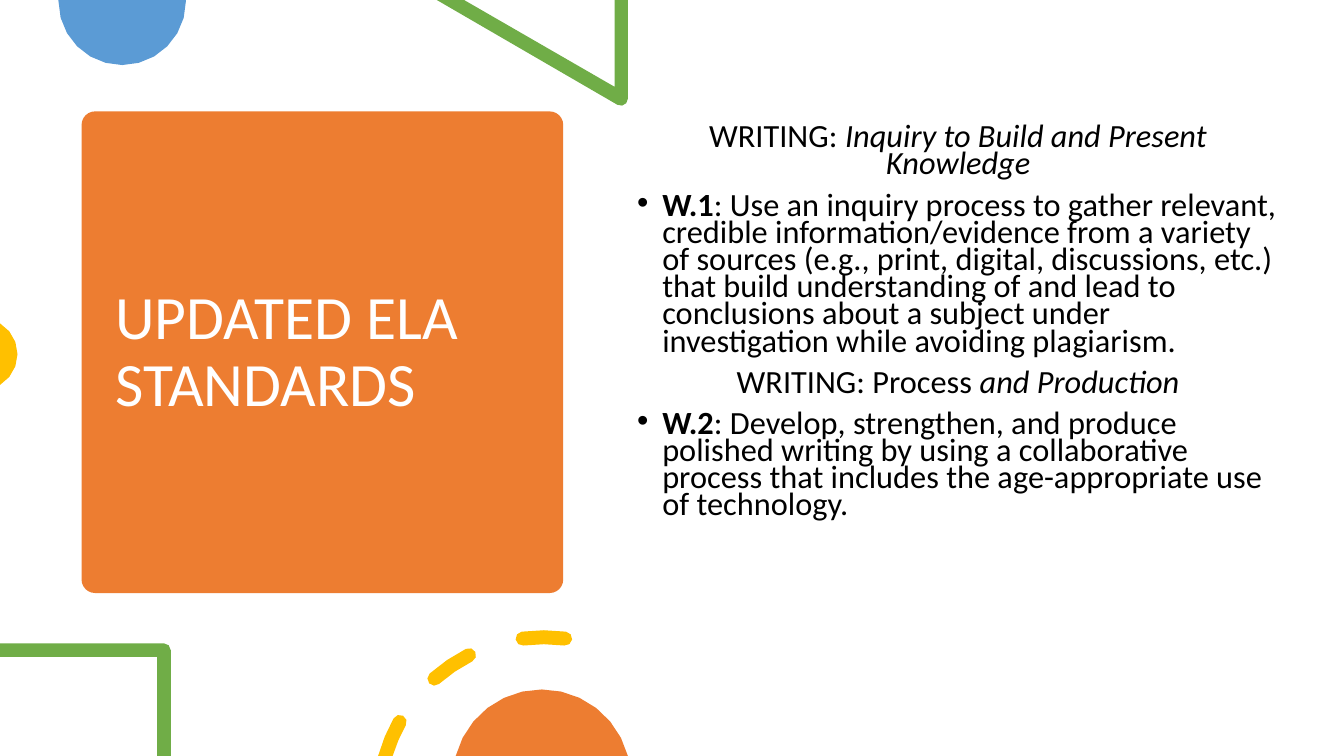
from dataclasses import dataclass
from math import acos, cos, degrees, radians, sin

from lxml import etree
from pptx import Presentation
from pptx.dml.color import RGBColor
from pptx.enum.shapes import MSO_SHAPE
from pptx.enum.text import MSO_ANCHOR, PP_ALIGN
from pptx.oxml.ns import qn
from pptx.util import Pt

ROUNDED = MSO_SHAPE.ROUNDED_RECTANGLE
MIDDLE, TOP = MSO_ANCHOR.MIDDLE, MSO_ANCHOR.TOP
CENTER, LEFT = PP_ALIGN.CENTER, PP_ALIGN.LEFT


@dataclass(frozen=True)
class Theme:
    font: str = "Calibri"
    title_size: float = 44
    body_size: float = 23.1
    orange: RGBColor = RGBColor(0xED, 0x7D, 0x31)
    blue: RGBColor = RGBColor(0x5B, 0x9B, 0xD5)
    green: RGBColor = RGBColor(0x70, 0xAD, 0x47)
    yellow: RGBColor = RGBColor(0xFF, 0xC0, 0x00)
    white: RGBColor = RGBColor(0xFF, 0xFF, 0xFF)
    black: RGBColor = RGBColor(0, 0, 0)


T = Theme()
WIDTH, HEIGHT = 960, 540

# Each paragraph: is it a bullet, then its (text, bold, italic) runs
STANDARDS = [
    (False, [("WRITING: ", False, False),
             ("Inquiry to Build and Present Knowledge", False, True)]),
    (True, [("W.1", True, False),
            (": Use an inquiry process to gather relevant, credible "
             "information/evidence from a variety of sources (e.g., print, "
             "digital, discussions, etc.) that build understanding of and lead "
             "to conclusions about a subject under investigation while "
             "avoiding plagiarism.", False, False)]),
    (False, [("WRITING: Process", False, False),
             (" and Production", False, True)]),
    (True, [("W.2", True, False),
            (": Develop, strengthen, and produce polished writing by using a "
             "collaborative process that includes the age-appropriate use of "
             "technology.", False, False)]),
]


def paint(sp, color):
    sp.shadow.inherit = False
    sp.fill.solid()
    sp.fill.fore_color.rgb = color
    sp.line.fill.background()


def arc(cx, cy, radius, start, end, steps):
    """Points on an arc; degrees run clockwise from three o'clock."""
    angles = [radians(start + (end - start) * i / steps) for i in range(steps + 1)]
    return [(cx + radius * cos(a), cy + radius * sin(a)) for a in angles]


def outline(s, contours, color):
    """One filled shape made of one or more closed contours."""
    builder = None
    for points in contours:
        first, *rest = [(Pt(x), Pt(y)) for x, y in points]
        if builder is None:
            builder = s.shapes.build_freeform(*first, scale=1.0)
        else:
            builder.move_to(*first)
        builder.add_line_segments(rest, close=True)
    paint(builder.convert_to_shape(), color)


def text_frame(s, box, anchor):
    tf = s.shapes.add_textbox(*map(Pt, box)).text_frame
    tf.word_wrap = True
    tf.vertical_anchor = anchor
    return tf


def style_run(r, size, color):
    r.font.name = T.font
    r.font.size = Pt(size)
    r.font.color.rgb = color


def title_card(s, box):
    x, y, w, h = box
    sp = s.shapes.add_shape(ROUNDED, *map(Pt, box))
    sp.adjustments[0] = 0.028
    paint(sp, T.orange)
    tf = text_frame(s, (x + 17, y + 8.4, w - 34, h - 16), MIDDLE)
    tf.text = "UPDATED ELA STANDARDS"
    p = tf.paragraphs[0]
    p.line_spacing = 0.9
    style_run(p.runs[0], T.title_size, T.white)


def add_bullet(p):
    pPr = p._p.get_or_add_pPr()
    pPr.set("marL", str(Pt(18)))
    pPr.set("indent", str(Pt(-18)))
    etree.SubElement(pPr, qn("a:buFont")).set("typeface", "Arial")
    etree.SubElement(pPr, qn("a:buChar")).set("char", "•")


def standards_list(s, box):
    tf = text_frame(s, box, TOP)
    tf.margin_top = Pt(25.2)
    for i, (bulleted, runs) in enumerate(STANDARDS):
        p = tf.add_paragraph() if i else tf.paragraphs[0]
        if bulleted:
            add_bullet(p)
        p.alignment = LEFT if bulleted else CENTER
        p.line_spacing = 0.7
        if i:
            p.space_before = Pt(10)
        for text, bold, italic in runs:
            r = p.add_run()
            r.text = text
            style_run(r, T.body_size, T.black)
            r.font.bold, r.font.italic = bold, italic


def top_circle(s, box):
    x, y, w, _ = box
    radius = w / 2
    outline(s, [[(x + w, y), *arc(x + radius, y + 1, radius, 0, 180, 12), (x, y)]], T.blue)


def top_triangle(s, box):
    x, y, w, h = box
    right, band = x + w, 9.5
    corner = arc(right - 5, y + h - 5, 5, 0, 120, 3)
    outline(s, [[(right, y), *corner, (x, y), (x + 19.5, y),
                 (right - band, y + 62), (right - band, y)]], T.green)


def left_circle(s, box):
    x, y, w, h = box
    radius = (h * h / 4 + w * w) / (2 * w)
    half = degrees(acos((radius - w) / radius))
    outline(s, [arc(x + w - radius, y + h / 2, radius, -half, half, 6)], T.yellow)


def bottom_frame(s, box):
    x, y, w, h = box
    band = 9.8
    right, bottom = x + w, y + h
    outline(s, [[(x, y), *arc(right - 5, y + 5, 5, -90, 0, 2), (right, bottom),
                 (right - band, bottom), (right - band, y + band), (x, y + band)]], T.green)


def dashed_ring(s, box):
    """Rounded dashes of a ring whose top middle is that of the box."""
    x, y, w, h = box
    radius, half = 118, 5
    cx, cy = x + w / 2, y + half + radius
    depth = cy - (y + h)
    outer, inner = radius + half, radius - half

    def cut(r):
        return -90 - degrees(acos(depth / r))

    def cap(angle, turn):
        center = arc(cx, cy, radius, angle, angle, 1)[0]
        return arc(*center, half, turn, turn + 180, 4)[1:-1]

    dashes = []
    for start, end in ((None, -150.8), (-131.5, -116.9), (-97.4, -82.6)):
        clipped = start is None
        points = arc(cx, cy, outer, cut(outer) if clipped else start, end, 2)
        points += cap(end, end)
        points += arc(cx, cy, inner, end, cut(inner) if clipped else start, 2)
        if not clipped:
            points += cap(start, start + 180)
        dashes.append(points)
    outline(s, dashes, T.yellow)


def bottom_circle(s, box):
    x, y, w, h = box
    radius = (w * w / 4 + h * h) / (2 * h)
    half = degrees(acos((radius - h) / radius))
    outline(s, [arc(x + w / 2, y + radius, radius, -90 - half, -90 + half, 12)], T.orange)


def main():
    prs = Presentation()
    prs.slide_width, prs.slide_height = Pt(WIDTH), Pt(HEIGHT)
    s = prs.slides.add_slide(prs.slide_layouts[6])
    title_card(s, (58.3, 79.6, 344, 344))
    top_circle(s, (41.8, 0, 91, 47))
    top_triangle(s, (312, 0, 136.5, 75.5))
    left_circle(s, (0, 231, 12.5, 44))
    standards_list(s, (448, 64.8, 473, 385))
    bottom_frame(s, (0, 459.5, 122, HEIGHT - 459.5))
    dashed_ring(s, (268.5, 450.2, 240, HEIGHT - 450.2))
    bottom_circle(s, (325.5, 492.5, 123, HEIGHT - 492.5))
    prs.save("out.pptx")


if __name__ == "__main__":
    main()
